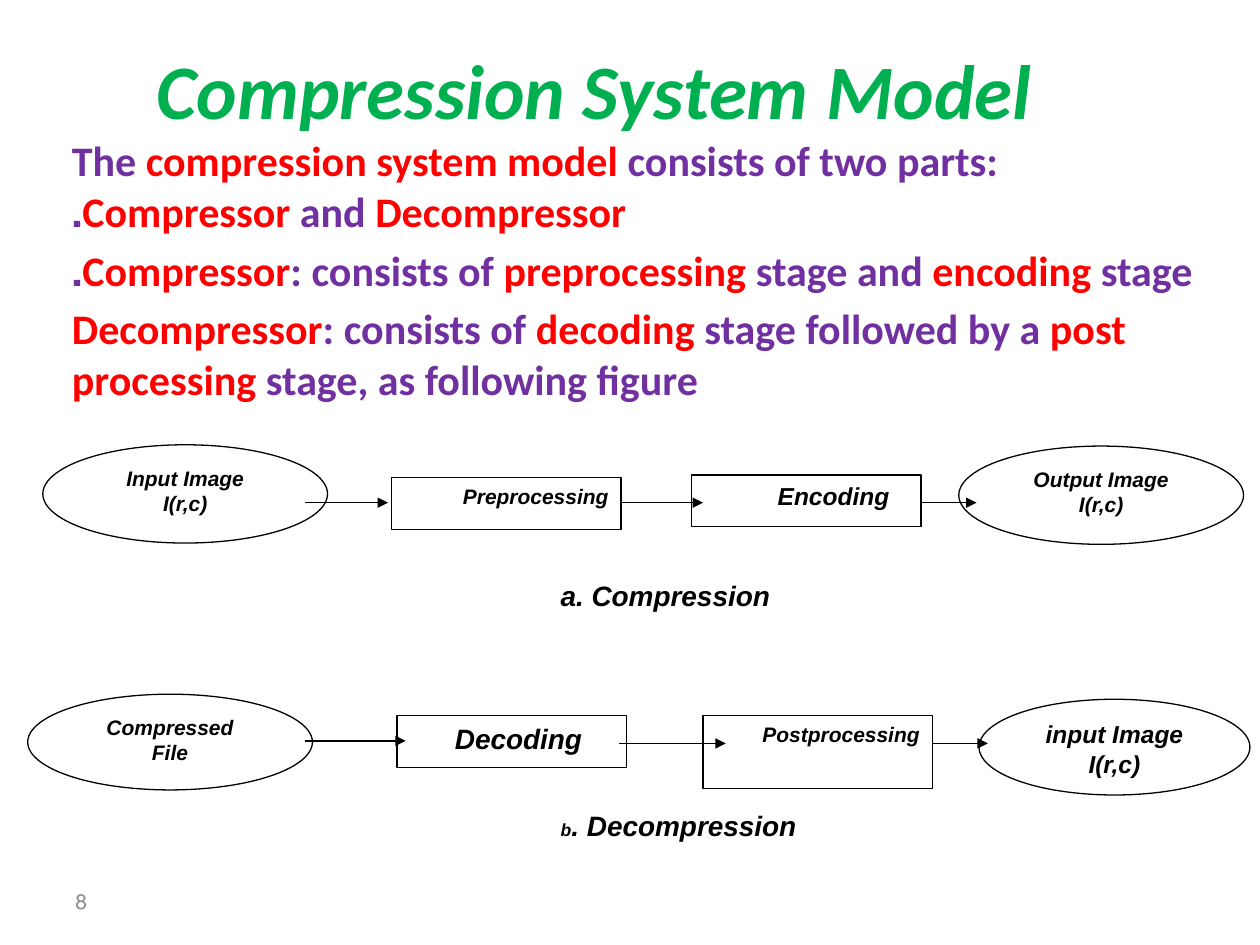
from lxml import etree
from pptx import Presentation
from pptx.dml.color import RGBColor
from pptx.enum.shapes import MSO_CONNECTOR, MSO_SHAPE
from pptx.enum.text import MSO_ANCHOR, MSO_AUTO_SIZE, PP_ALIGN
from pptx.oxml.ns import qn
from pptx.util import Inches, Pt

LEFT, CENTER, RIGHT = PP_ALIGN.LEFT, PP_ALIGN.CENTER, PP_ALIGN.RIGHT
TOP, MIDDLE = MSO_ANCHOR.TOP, MSO_ANCHOR.MIDDLE
OVAL, RECTANGLE = MSO_SHAPE.OVAL, MSO_SHAPE.RECTANGLE
STRAIGHT = MSO_CONNECTOR.STRAIGHT
NO_AUTOFIT = MSO_AUTO_SIZE.NONE

GREEN = RGBColor(0x00, 0xB0, 0x50)
PURPLE = RGBColor(0x70, 0x30, 0xA0)
RED = RGBColor(0xFF, 0x00, 0x00)
BLACK = RGBColor(0x00, 0x00, 0x00)
WHITE = RGBColor(0xFF, 0xFF, 0xFF)
GRAY = RGBColor(0x8C, 0x8C, 0x8C)

# Words between asterisks are highlighted in red
BODY = [
    "The *compression system model* consists of two parts: *Compressor* and *Decompressor*.",
    "*Compressor*: consists of *preprocessing* stage and *encoding* stage.",
    "*Decompressor*: consists of *decoding* stage followed by a *post processing *"
    "stage, as following figure",
]

# Lines, left, top, width, height, text size
OVALS = [
    (("Input Image", "I(r,c)"), 0.34, 3.53, 2.26, 0.78, 12),
    (("Output Image", "I(r,c)"), 7.61, 3.54, 2.26, 0.78, 12),
    (("Compressed", "File"), 0.22, 5.51, 2.26, 0.76, 12),
    (("input Image", "I(r,c)"), 7.77, 5.55, 2.15, 0.76, 14),
]

# Label, left, top, height, text size, right margin
STAGES = [
    ("Preprocessing", 3.11, 3.79, 0.41, 12, 0.1),
    ("Encoding", 5.49, 3.77, 0.41, 14, 0.25),
    ("Decoding", 3.15, 5.68, 0.41, 16, 0.35),
    ("Postprocessing", 5.58, 5.68, 0.58, 12, 0.1),
]
STAGE_WIDTH = 1.82

# Start x, end x, y
ARROWS = [
    (2.42, 3.08, 3.99), (4.92, 5.58, 3.99), (7.31, 7.75, 3.99),
    (2.42, 3.22, 5.88), (4.91, 5.76, 5.9), (7.4, 7.84, 5.9),
]


def place(shape, left, top, width, height):
    shape.left, shape.top = Inches(left), Inches(top)
    shape.width, shape.height = Inches(width), Inches(height)


def prepare_frame(shape, anchor):
    frame = shape.text_frame
    frame.word_wrap = True
    frame.auto_size = NO_AUTOFIT
    frame.vertical_anchor = anchor
    return frame


def format_paragraph(paragraph, alignment, name, size, color=None,
                     bold=True, italic=True, right_to_left=True):
    paragraph.alignment = alignment
    if right_to_left:
        paragraph._p.get_or_add_pPr().set("rtl", "1")
    font = paragraph.font
    font.name, font.size = name, Pt(size)
    font.bold, font.italic = bold, italic
    if color is not None:
        font.color.rgb = color


def fill_title(title):
    place(title, 0.47, 0.23, 8.5, 0.94)
    frame = prepare_frame(title, MIDDLE)
    frame.text = "Compression System Model"
    format_paragraph(frame.paragraphs[0], CENTER, "Calibri", 44, GREEN)


def fill_body(body):
    place(body, 0.47, 1.02, 9.14, 6.09)
    frame = prepare_frame(body, TOP)
    for index, text in enumerate(BODY):
        paragraph = frame.add_paragraph() if index else frame.paragraphs[0]
        format_paragraph(paragraph, LEFT, "Calibri", 24, italic=False)
        paragraph.space_before = Pt(4.8 if index else 0)
        for part_index, part in enumerate(text.split("*")):
            if part:
                run = paragraph.add_run()
                run.text = part
                run.font.color.rgb = RED if part_index % 2 else PURPLE


def add_box(slide, kind, left, top, width, height, line_color=BLACK):
    shape = slide.shapes.add_shape(
        kind, Inches(left), Inches(top), Inches(width), Inches(height))
    shape.shadow.inherit = False
    shape.fill.solid()
    shape.fill.fore_color.rgb = WHITE
    shape.line.color.rgb = line_color
    shape.line.width = Pt(0.75)
    return shape


def add_oval(slide, lines, left, top, width, height, size):
    oval = add_box(slide, OVAL, left, top, width, height)
    frame = prepare_frame(oval, TOP)
    frame.text = "\n".join(lines)
    for index, paragraph in enumerate(frame.paragraphs):
        format_paragraph(paragraph, CENTER, "Arial", size, BLACK,
                         right_to_left=index == 0)


def add_stage(slide, label, left, top, height, size, margin):
    stage = add_box(slide, RECTANGLE, left, top, STAGE_WIDTH, height)
    frame = prepare_frame(stage, TOP)
    frame.margin_right = Inches(margin)
    frame.text = label
    format_paragraph(frame.paragraphs[0], RIGHT, "Arial", size, BLACK)


def add_caption(slide, letter, letter_size, text, left, top, width):
    caption = add_box(slide, RECTANGLE, left, top, width, 0.41, WHITE)
    paragraph = prepare_frame(caption, TOP).paragraphs[0]
    format_paragraph(paragraph, RIGHT, "Arial", 16, BLACK)
    for part, size in ((letter, letter_size), (text, 16)):
        run = paragraph.add_run()
        run.text = part
        run.font.size = Pt(size)


def add_arrow(slide, start, end, y):
    arrow = slide.shapes.add_connector(
        STRAIGHT, Inches(start), Inches(y), Inches(end), Inches(y))
    arrow.line.color.rgb = BLACK
    arrow.line.width = Pt(0.75)
    etree.SubElement(arrow.line._get_or_add_ln(), qn("a:tailEnd"), type="triangle")
    etree.SubElement(arrow._element.spPr, qn("a:effectLst"))


def add_page_number(slide):
    box = slide.shapes.add_textbox(Inches(0.5), Inches(6.95), Inches(2.33), Inches(0.4))
    frame = prepare_frame(box, MIDDLE)
    frame.text = "8"
    format_paragraph(frame.paragraphs[0], LEFT, "Calibri", 12, GRAY,
                     bold=False, italic=False)


def main():
    presentation = Presentation()
    presentation.slide_width, presentation.slide_height = Inches(10), Inches(7.5)
    slide = presentation.slides.add_slide(presentation.slide_layouts[0])

    # Title and explanation
    fill_title(slide.shapes.title)
    fill_body(slide.placeholders[1])

    # Compression and decompression diagrams
    for oval in OVALS:
        add_oval(slide, *oval)
    for stage in STAGES:
        add_stage(slide, *stage)
    add_caption(slide, "a", 16, ". Compression", 4.22, 4.54, 1.99)
    add_caption(slide, "b", 10, ". Decompression", 3.99, 6.37, 2.43)
    for arrow in ARROWS:
        add_arrow(slide, *arrow)

    add_page_number(slide)
    presentation.save("out.pptx")


if __name__ == "__main__":
    main()
